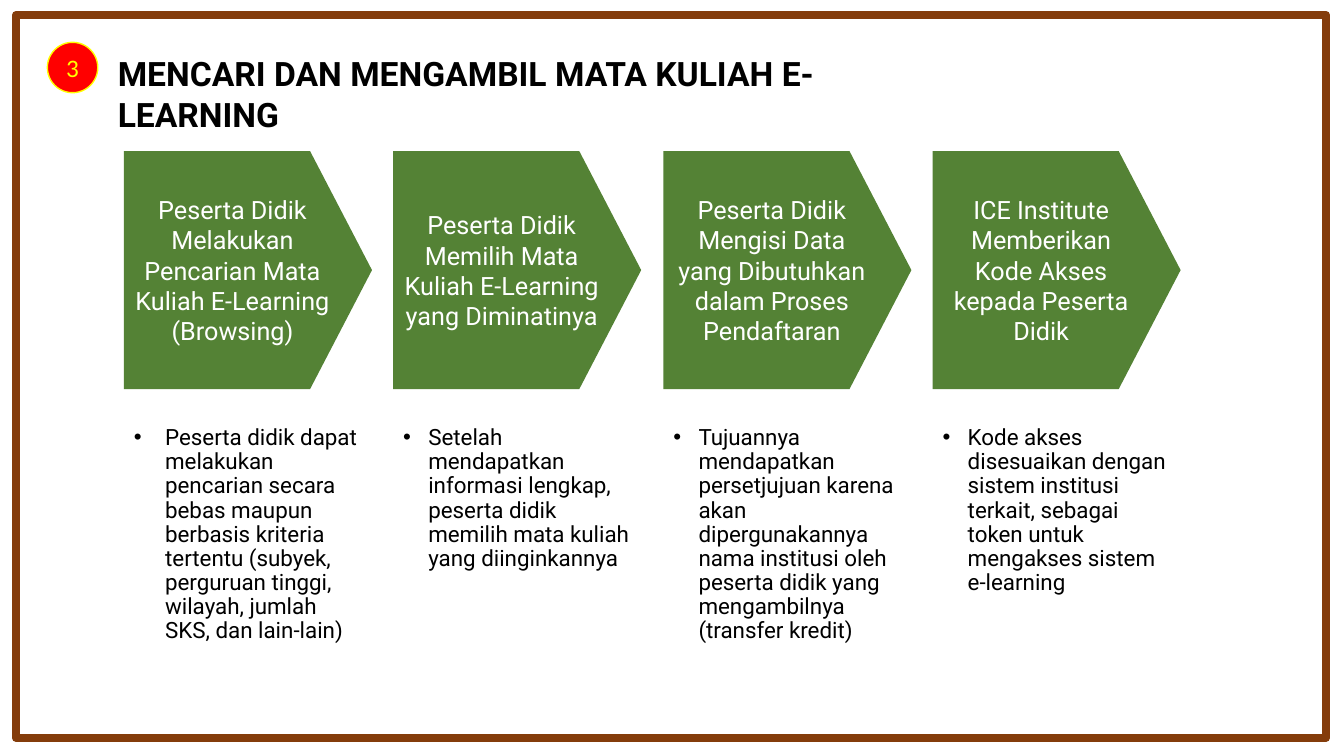
from pptx import Presentation
from pptx.dml.color import RGBColor as RGB
from pptx.enum.shapes import MSO_SHAPE as SHAPE
from pptx.enum.text import MSO_ANCHOR as ANCHOR, PP_ALIGN as ALIGN
from pptx.oxml.ns import qn
from pptx.util import Pt
from lxml.etree import SubElement

COLORS = {"red": "FF0000", "yellow": "FFFF00", "brown": "843C0B",
          "green": "548235", "white": "FFFFFF", "black": "000000"}
PX = 9144

STEPS = [
    ("Peserta Didik Melakukan Pencarian Mata Kuliah E-Learning\n(Browsing)",
     "Peserta didik dapat melakukan pencarian secara bebas maupun berbasis "
     "kriteria tertentu (subyek, perguruan tinggi, wilayah, jumlah SKS, dan lain-lain)", 31),
    ("Peserta Didik Memilih Mata Kuliah E-Learning yang Diminatinya",
     "Setelah mendapatkan informasi lengkap, peserta didik memilih mata kuliah "
     "yang diinginkannya", 25),
    ("Peserta Didik Mengisi Data yang Dibutuhkan dalam Proses Pendaftaran",
     "Tujuannya mendapatkan persetjujuan karena akan dipergunakannya nama institusi "
     "oleh peserta didik yang mengambilnya (transfer kredit)", 25),
    ("ICE Institute Memberikan Kode Akses kepada Peserta Didik",
     "Kode akses disesuaikan dengan sistem institusi terkait, sebagai token untuk "
     "mengakses sistem e-learning", 25),
]


class Deck:
    """Draws styled elements on the current slide, with lengths in px."""

    def __init__(self, width, height, font="Roboto"):
        self.prs = Presentation()
        self.prs.slide_width, self.prs.slide_height = width * PX, height * PX
        self.font = font
        self.s = self.prs.slides.add_slide(self.prs.slide_layouts[6])

    def color(self, name):
        return RGB.from_string(COLORS[name])

    def fill_text(self, tf, text, size, color, bold=False, align=ALIGN.LEFT, font=None):
        tf.word_wrap = True
        tf.text = text
        for p in tf.paragraphs:
            p.alignment = align
            for r in p.runs:
                r.font.name = font or self.font
                r.font.size = Pt(size)
                r.font.bold = bold
                r.font.color.rgb = self.color(color)

    def shape(self, kind, x, y, w, h, fill=None, line=None, weight=1):
        sp = self.s.shapes.add_shape(kind, x * PX, y * PX, w * PX, h * PX)
        sp.shadow.inherit = False
        if fill:
            sp.fill.solid()
            sp.fill.fore_color.rgb = self.color(fill)
        else:
            sp.fill.background()
        if line:
            sp.line.color.rgb = self.color(line)
            sp.line.width = Pt(weight)
        else:
            sp.line.fill.background()
        return sp

    def label(self, sp, text, size, color, font=None):
        sp.text_frame.vertical_anchor = ANCHOR.MIDDLE
        self.fill_text(sp.text_frame, text, size, color, align=ALIGN.CENTER, font=font)

    def text(self, x, y, w, h, text, size, bold=False):
        sp = self.s.shapes.add_textbox(x * PX, y * PX, w * PX, h * PX)
        self.fill_text(sp.text_frame, text, size, "black", bold)
        return sp.text_frame

    def bullet(self, x, y, w, h, text, size, indent):
        p = self.text(x, y, w, h, text, size).paragraphs[0]
        p.line_spacing = 0.9
        pPr = p._p.get_or_add_pPr()
        pPr.set("marL", str(indent * PX))
        pPr.set("indent", str(-indent * PX))
        SubElement(pPr, qn("a:buFont"), typeface="Arial")
        SubElement(pPr, qn("a:buChar"), char="•")


def main():
    deck = Deck(1333, 750)
    badge = deck.shape(SHAPE.OVAL, 47, 42, 50, 50, "red", "yellow")
    deck.label(badge, "3", 18, "yellow", "Calibri")
    deck.text(107, 48, 867, 50, "MENCARI DAN MENGAMBIL MATA KULIAH E-LEARNING", 24, True)
    deck.shape(SHAPE.RECTANGLE, 16, 15, 1299, 717, line="brown", weight=6)
    for i, (title, detail, indent) in enumerate(STEPS):
        x = 123 + round(i * 267.4)
        arrow = deck.shape(SHAPE.PENTAGON, x, 150, 246, 236, "green")
        arrow.adjustments[0] = 0.26
        deck.label(arrow, title, 18, "white")
        deck.bullet(x, 418, 246, 258, detail, 16, indent)
    deck.prs.save("out.pptx")


if __name__ == "__main__":
    main()
